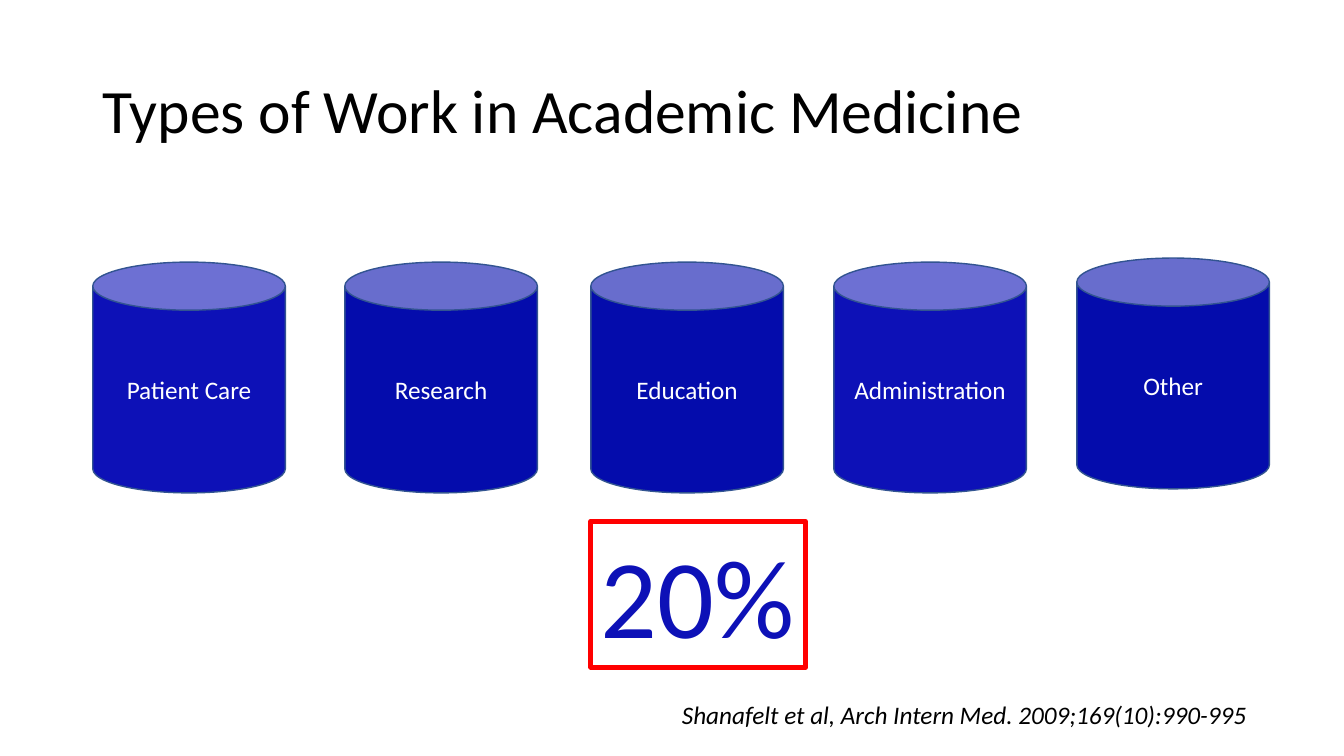
"""Build the slide on types of work in academic medicine."""
from pptx import Presentation
from pptx.dml.color import RGBColor
from pptx.enum.shapes import MSO_SHAPE
from pptx.enum.text import MSO_ANCHOR, PP_ALIGN
from pptx.util import Inches, Pt

CAN, RECTANGLE = MSO_SHAPE.CAN, MSO_SHAPE.RECTANGLE
TOP, MIDDLE = MSO_ANCHOR.TOP, MSO_ANCHOR.MIDDLE
LEFT, CENTER = PP_ALIGN.LEFT, PP_ALIGN.CENTER

COLORS = {"black": "000000", "white": "FFFFFF", "navy": "040CAC",
          "blue": "0D11B7", "outline": "325491", "red": "FF0000"}
FONT = "Calibri"
TITLE = "Types of Work in Academic Medicine"
CITATION = "Shanafelt et al, Arch Intern Med. 2009;169(10):990-995"
SHARE = "20%"
WORK_TYPES = [
    ("Patient Care", 0.92, 2.6, "blue"),
    ("Research", 3.42, 2.6, "navy"),
    ("Education", 5.86, 2.6, "navy"),
    ("Administration", 8.27, 2.6, "blue"),
    ("Other", 10.68, 2.56, "navy"),
]
SLIDE_WIDTH, SLIDE_HEIGHT = 13.33, 7.5
MARGIN = 0.92
CAN_WIDTH, CAN_HEIGHT = 1.91, 2.29
EDUCATION_LEFT = WORK_TYPES[2][1]


def color(name):
    return RGBColor.from_string(COLORS[name])


def write(shape, text, size, ink, align=LEFT, anchor=TOP, wrap=True):
    frame = shape.text_frame
    frame.text = text
    frame.word_wrap = wrap
    frame.vertical_anchor = anchor
    para = frame.paragraphs[0]
    para.alignment = align
    font = para.runs[0].font
    font.name, font.size = FONT, Pt(size)
    font.color.rgb = color(ink)
    return para


def add_outlined(page, kind, bounds, line, width, fill=None):
    shape = page.shapes.add_shape(kind, *map(Inches, bounds))
    shape.shadow.inherit = False
    if fill:
        shape.fill.solid()
        shape.fill.fore_color.rgb = color(fill)
    else:
        shape.fill.background()
    shape.line.color.rgb = color(line)
    shape.line.width = Pt(width)
    return shape


def add_text(page, bounds):
    return page.shapes.add_textbox(*map(Inches, bounds))


def main():
    deck = Presentation()
    deck.slide_width, deck.slide_height = Inches(SLIDE_WIDTH), Inches(SLIDE_HEIGHT)
    page = deck.slides.add_slide(deck.slide_layouts[6])

    title = add_text(page, (MARGIN, 0.4, SLIDE_WIDTH - 2 * MARGIN, 1.45))
    write(title, TITLE, 44, "black", anchor=MIDDLE).line_spacing = 0.9

    citation = add_text(page, (SLIDE_WIDTH / 2, 6.89, 5.92, 0.4))
    write(citation, CITATION, 18, "black", wrap=False).runs[0].font.italic = True

    for label, left, top, fill in WORK_TYPES:
        bounds = (left, top, CAN_WIDTH, CAN_HEIGHT)
        can = add_outlined(page, CAN, bounds, "outline", 1, fill)
        write(can, label, 18, "white", CENTER, MIDDLE)

    share = add_outlined(page, RECTANGLE, (EDUCATION_LEFT, 5.17, 2.13, 1.45), "red", 3.5)
    write(share, SHARE, 80, "blue")

    deck.save("out.pptx")


if __name__ == "__main__":
    main()
